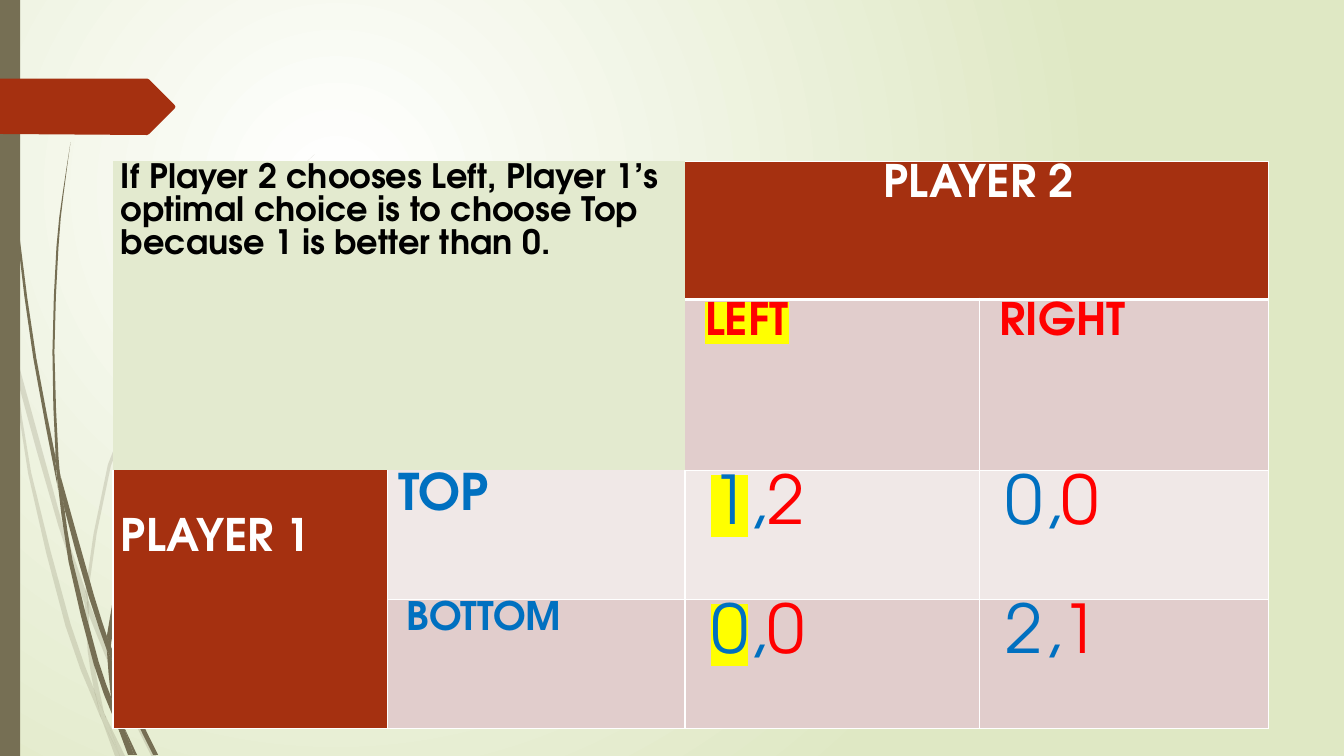
import pptx
import pptx.util
import pptx.dml.color
import pptx.enum.shapes
import pptx.enum.text
import pptx.oxml
import pptx.oxml.ns
from lxml import etree

Inches, Pt = pptx.util.Inches, pptx.util.Pt
PP_ALIGN = pptx.enum.text.PP_ALIGN
SHAPES = pptx.enum.shapes.MSO_SHAPE
qn = pptx.oxml.ns.qn

FONT = "TeX Gyre Adventor"
COLOURS = {
    "white": "FFFFFF", "black": "000000", "meadow": "DFE8C4", "corner": "E3EACF",
    "rust": "A53010", "olive": "766F54", "rose": "E1CDCC", "pale": "F0E8E7",
    "player1": "0070C0", "player2": "FF0000", "marker": "FFFF00",
}
WIDTH, HEIGHT = Inches(13.33), Inches(7.5)

# Each blade of grass is its left and right edge, in hundredths of an inch on a 7.5 inch slide.
FAINT_GRASS = [
    ([(0, 299), (10, 344), (11, 350)], [(0, 282), (9, 322), (11, 350)]),
    ([(14, 345), (17, 376), (58, 522), (84, 599)], [(14, 345), (62, 520), (85, 586)]),
    ([(88, 596), (88, 610), (123, 694), (150, 750)], [(88, 596), (92, 607), (127, 692), (155, 750)]),
    ([(105, 711), (119, 750)], [(105, 711), (124, 750)]),
    ([(11, 350), (28, 470), (65, 621), (92, 693), (101, 714)],
     [(11, 350), (17, 376), (31, 469), (70, 619), (93, 683), (99, 707), (101, 714)]),
    ([(84, 599), (87, 646), (93, 683), (96, 692), (105, 711)],
     [(84, 599), (88, 608), (88, 610), (91, 646), (103, 706), (105, 711)]),
    ([(85, 586), (85, 584), (107, 461), (158, 348), (228, 244), (268, 197), (289, 175), (312, 153)],
     [(88, 596), (88, 584), (110, 462), (160, 349), (229, 245), (268, 198), (290, 175), (312, 153)]),
    ([(101, 714), (114, 750)], [(101, 714), (119, 750)]),
    ([(85, 586), (84, 599), (88, 608)], [(85, 586), (88, 596), (88, 610)]),
    ([(93, 683), (99, 707), (101, 714), (119, 750)], [(93, 683), (96, 692), (105, 711), (119, 750)]),
]
DARK_GRASS = [
    ([(3, 0), (4, 48), (7, 110), (17, 233), (33, 355), (56, 477), (57, 481)],
     [(4, 0), (5, 48), (8, 109), (19, 232), (36, 355), (55, 453), (55, 457), (57, 481)]),
    ([(60, 472), (64, 505), (88, 592), (106, 645)], [(60, 472), (93, 590), (106, 631), (106, 633)]),
    ([(110, 641), (111, 656), (132, 708), (152, 749)],
     [(110, 641), (113, 649), (136, 706), (157, 749)]),
    ([(57, 477), (68, 557), (93, 659), (111, 708), (117, 722)],
     [(57, 477), (64, 505), (72, 556), (98, 657), (110, 691), (116, 717), (117, 722)]),
    ([(70, 141), (62, 193), (56, 245), (52, 349), (55, 449), (60, 472)],
     [(70, 141), (63, 193), (58, 245), (54, 349), (58, 453), (60, 472)]),
    ([(122, 719), (133, 749)], [(122, 719), (136, 749)]),
    ([(55, 449), (55, 453), (57, 477), (64, 505)], [(55, 449), (60, 472), (64, 505)]),
    ([(106, 631), (122, 551), (156, 474), (204, 405), (231, 373), (245, 358), (260, 344)],
     [(110, 641), (111, 633), (125, 552), (158, 476), (205, 406), (231, 374), (245, 359), (261, 344)]),
    ([(117, 722), (127, 749)], [(117, 722), (131, 749)]),
    ([(106, 645), (110, 691), (116, 706), (122, 719)],
     [(106, 645), (109, 651), (111, 656), (121, 716), (122, 719)]),
    ([(106, 631), (106, 645), (109, 651)], [(106, 631), (110, 641), (111, 656)]),
    ([(110, 691), (116, 717), (117, 722), (130, 749)],
     [(110, 691), (116, 706), (122, 719), (133, 749)]),
]


def rgb(colour):
    return pptx.dml.color.RGBColor.from_string(COLOURS[colour])


def paint(shape, colour, opacity=100):
    shape.shadow.inherit = False
    shape.line.fill.background()
    shape.fill.solid()
    shape.fill.fore_color.rgb = rgb(colour)
    if opacity < 100:
        tint = shape.fill._xPr.find(qn("a:solidFill"))[0]
        etree.SubElement(tint, qn("a:alpha"), val=str(opacity * 1000))


def smooth(knots):
    """Add a Catmull-Rom midpoint between neighbouring knots of a long edge."""
    if len(knots) < 4:
        return knots
    padded = [knots[0], *knots, knots[-1]]
    curve = []
    for a, b, c, d in zip(padded, padded[1:], padded[2:], padded[3:]):
        middle = tuple((9 * (q + r) - p - s) / 16 for p, q, r, s in zip(a, b, c, d))
        curve += [b, middle]
    return curve + [knots[-1]]


def draw_grass(slide, height, blades, opacity):
    for left_edge, right_edge in blades:
        outline = smooth(left_edge) + smooth(right_edge)[:0:-1]
        units = [(round(x * 100), round(y * 100)) for x, y in outline]
        builder = slide.shapes.build_freeform(*units[0], scale=height / 75000)
        builder.add_line_segments(units[1:], close=True)
        paint(builder.convert_to_shape(), "olive", opacity)


def draw_background(slide):
    fill = slide.background.fill
    fill.gradient()
    for stop, colour in zip(fill.gradient_stops, ("white", "meadow")):
        stop.color.rgb = rgb(colour)
    gradient = slide._element.cSld.find(".//" + qn("a:gradFill"))
    gradient.remove(gradient.find(qn("a:lin")))
    circle = etree.SubElement(gradient, qn("a:path"), path="circle")
    etree.SubElement(circle, qn("a:fillToRect"), l="50000", t="50000", r="100000", b="100000")


def draw_left_edge(slide, width, height):
    draw_grass(slide, height, FAINT_GRASS, 20)
    draw_grass(slide, height, DARK_GRASS, 100)
    bar = slide.shapes.add_shape(SHAPES.RECTANGLE, 0, 0, int(width * 0.015), height)
    paint(bar, "olive")
    ribbon = slide.shapes.build_freeform(0, 78, scale=height / 750)
    ribbon.add_line_segments(
        [(146, 78), (148, 79), (173, 104), (174, 106), (173, 108), (148, 133), (146, 134), (0, 133)])
    paint(ribbon.convert_to_shape(), "rust")


def write(cell, pieces, size=32, bold=True, align=PP_ALIGN.LEFT, indent=0, top=0):
    """Fill a cell with (text, colour, highlighted) pieces."""
    cell.margin_left = cell.margin_right = Inches(0.08)
    cell.margin_top, cell.margin_bottom = Inches(top), 0
    paragraph = cell.text_frame.paragraphs[0]
    paragraph.alignment = align
    paragraph.line_spacing = 1.07
    paragraph.space_after = Pt(8)
    paragraph._p.get_or_add_pPr().set("marL", str(Inches(indent)))
    for text, colour, highlighted in pieces:
        run = paragraph.add_run()
        run.text = text
        run.font.size, run.font.bold, run.font.name = Pt(size), bold, FONT
        run.font.color.rgb = rgb(colour)
        if highlighted:
            marker = etree.Element(qn("a:highlight"))
            etree.SubElement(marker, qn("a:srgbClr"), val=COLOURS["marker"])
            run.font._element.find(qn("a:solidFill")).addnext(marker)


def style_cell(cell, fill, borders):
    """Borders are widths in points for left, right, top and bottom."""
    cell.fill.solid()
    cell.fill.fore_color.rgb = rgb(fill)
    properties = cell._tc.get_or_add_tcPr()
    for place, (side, points) in enumerate(zip("LRTB", borders)):
        edge = etree.Element(qn("a:ln" + side), w=str(Pt(points)))
        if points:
            ink = etree.SubElement(edge, qn("a:solidFill"))
            etree.SubElement(ink, qn("a:srgbClr"), val=COLOURS["white"])
        else:
            etree.SubElement(edge, qn("a:noFill"))
        properties.insert(place, edge)


def draw_payoffs(slide, left, top, width, height):
    columns, rows = (2.72, 2.95, 2.92, 2.86), (1.37, 1.69, 1.28, 1.28)
    table = slide.shapes.add_table(4, 4, left, top, width, height).table
    table.first_row = table.horz_banding = False
    for column, share in zip(table.columns, columns):
        column.width = int(width * share / sum(columns))
    for row, share in zip(table.rows, rows):
        row.height = int(height * share / sum(rows))

    fills = [["corner", "corner", "rust", "rust"], ["corner", "corner", "rose", "rose"],
             ["rust", "pale", "pale", "pale"], ["rust", "rose", "rose", "rose"]]
    for r, row_fills in enumerate(fills):
        for c, fill in enumerate(row_fills):
            if fill == "corner":
                borders = (0, 0, 0, 0)
            else:
                borders = (0 if r < 2 and c == 2 else 1, 1,
                           3 if r == 1 else 0 if r == 2 and c < 2 else 1, 3 if r == 0 else 1)
            style_cell(table.cell(r, c), fill, borders)
    for first, last in (((0, 0), (1, 1)), ((0, 2), (0, 3)), ((2, 0), (3, 0))):
        table.cell(*first).merge(table.cell(*last))

    advice = ("If Player 2 chooses Left, Player 1’s optimal choice is to choose Top "
              "because 1 is better than 0.")
    write(table.cell(0, 0), [(advice, "black", False)], size=24)
    write(table.cell(0, 2), [("PLAYER 2", "white", False)], align=PP_ALIGN.CENTER, indent=0.04)
    write(table.cell(1, 2), [("LEFT", "player2", True)], indent=0.12)
    write(table.cell(1, 3), [("RIGHT", "player2", False)], indent=0.12)
    write(table.cell(2, 0), [("PLAYER 1", "white", False)], top=0.45)
    write(table.cell(2, 1), [("TOP", "player1", False)], size=36, indent=0.03)
    write(table.cell(3, 1), [("BOTTOM", "player1", False)], size=28, indent=0.11)
    for r, payoffs in ((2, ("12", "00")), (3, ("00", "21"))):
        for c, (mine, theirs) in enumerate(payoffs, start=2):
            pieces = [(mine, "player1", c == 2), (",", "player1", False),
                      (theirs, "player2", False)]
            write(table.cell(r, c), pieces, size=48, bold=False, indent=0.18)


def main():
    deck = pptx.Presentation()
    deck.slide_width, deck.slide_height = WIDTH, HEIGHT
    slide = deck.slides.add_slide(deck.slide_layouts[6])
    draw_background(slide)
    draw_left_edge(slide, WIDTH, HEIGHT)
    draw_payoffs(slide, Inches(1.12), Inches(1.6), Inches(11.46), Inches(5.63))
    deck.save("out.pptx")


if __name__ == "__main__":
    main()
